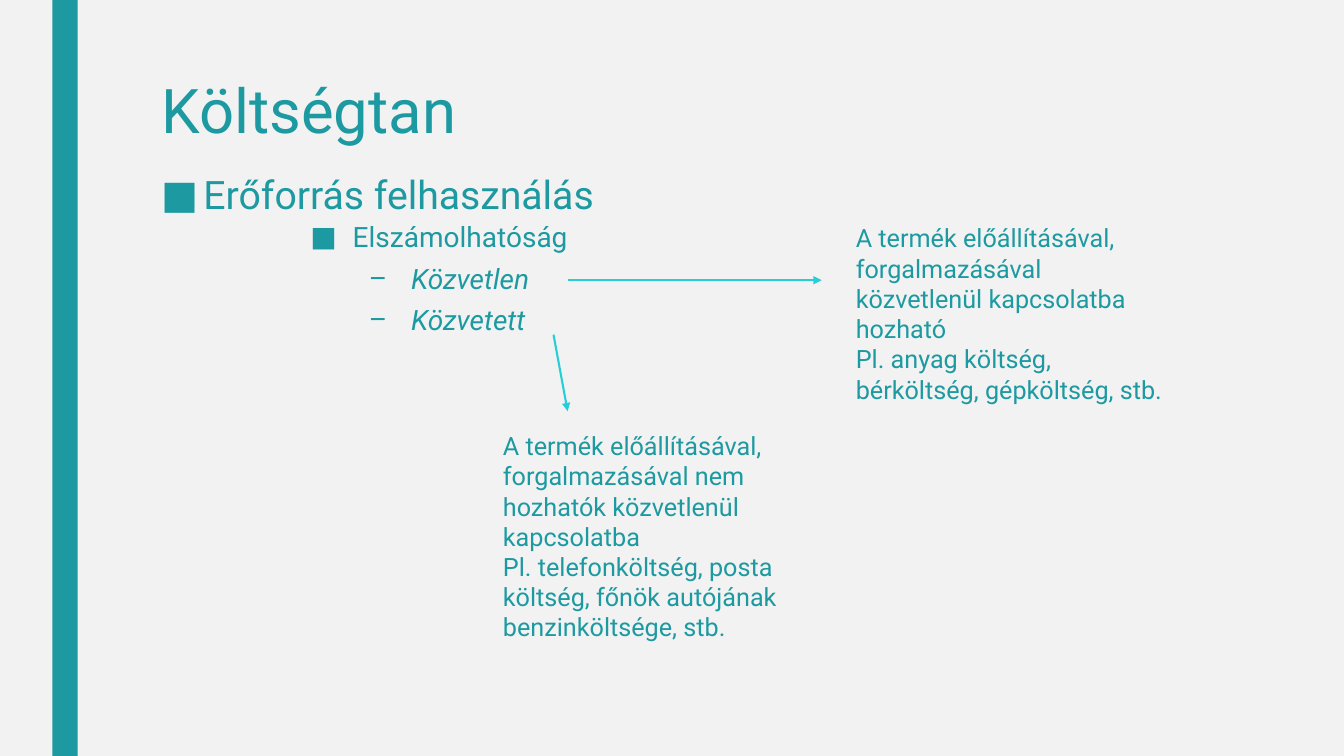
from pptx import Presentation
from pptx.dml.color import RGBColor
from pptx.enum.shapes import MSO_CONNECTOR, MSO_SHAPE
from pptx.enum.text import MSO_ANCHOR, MSO_AUTO_SIZE, PP_ALIGN
from pptx.oxml.ns import qn
from pptx.util import Inches, Pt
from lxml import etree

RECTANGLE = MSO_SHAPE.RECTANGLE
STRAIGHT = MSO_CONNECTOR.STRAIGHT
TOP = MSO_ANCHOR.TOP
LEFT = PP_ALIGN.LEFT
NO_FIT = MSO_AUTO_SIZE.NONE
GROW = MSO_AUTO_SIZE.SHAPE_TO_FIT_TEXT

FONT = "Roboto"
COLORS = {"background": "F2F2F2", "teal": "1D9AA1", "arrow": "27CED7"}
HANGING = 0.42


def color(name):
    return RGBColor.from_string(COLORS[name])


def add_span(para, text, size, italic=False):
    span = para.add_run()
    span.text = text
    span.font.name = FONT
    span.font.size = Pt(size)
    span.font.italic = italic
    span.font.color.rgb = color("teal")


def set_bullet(para, symbol, indent):
    properties = para._p.get_or_add_pPr()
    properties.set("marL", str(Inches(indent)))
    properties.set("indent", str(-Inches(HANGING)))
    etree.SubElement(properties, qn("a:buFont")).set("typeface", FONT)
    etree.SubElement(properties, qn("a:buChar")).set("char", symbol)


def add_text_box(page, box, fit=NO_FIT):
    frame = page.shapes.add_textbox(*map(Inches, box)).text_frame
    frame.word_wrap = True
    frame.auto_size = fit
    return frame


def next_paragraph(frame, index):
    return frame.add_paragraph() if index else frame.paragraphs[0]


def add_side_bar(page, box):
    bar = page.shapes.add_shape(RECTANGLE, *map(Inches, box))
    bar.shadow.inherit = False
    bar.fill.solid()
    bar.fill.fore_color.rgb = color("teal")
    bar.line.fill.background()


def add_title(page, box, text):
    title = page.shapes.title
    title.left, title.top, title.width, title.height = map(Inches, box)
    frame = title.text_frame
    frame.word_wrap = True
    frame.auto_size = NO_FIT
    frame.vertical_anchor = TOP
    para = frame.paragraphs[0]
    para.alignment = LEFT
    para.line_spacing = 0.89
    add_span(para, text, 44)


def add_list(page, box, items, size):
    frame = add_text_box(page, box)
    for index, (level, text) in enumerate(items):
        para = next_paragraph(frame, index)
        para.level = level
        para.line_spacing = 0.94
        para.space_before = Pt(5 if level else 10)
        para.space_after = Pt(2)
        set_bullet(para, "–" if level else "■", 1 if level else HANGING)
        add_span(para, text, size, italic=level > 0)


def add_note(page, box, texts):
    frame = add_text_box(page, box, GROW)
    for index, text in enumerate(texts):
        add_span(next_paragraph(frame, index), text, 18)


def add_arrow(page, start, end):
    arrow = page.shapes.add_connector(STRAIGHT, *map(Inches, start + end))
    arrow.line.color.rgb = color("arrow")
    arrow.line.width = Pt(1.5)
    line = arrow.line._get_or_add_ln()
    etree.SubElement(line, qn("a:tailEnd")).set("type", "triangle")
    etree.SubElement(arrow._element.spPr, qn("a:effectLst"))


def build_cost_slide(deck):
    page = deck.slides.add_slide(deck.slide_layouts[5])
    page.background.fill.solid()
    page.background.fill.fore_color.rgb = color("background")
    add_side_bar(page, (0.52, 0, 0.25, 7.5))
    add_title(page, (1.5, 0.75, 10.5, 1.62), "Költségtan")
    add_list(page, (1.5, 1.68, 10.5, 3.92), [(0, "Erőforrás felhasználás")], 28)
    add_list(
        page,
        (2.98, 2.16, 4.09, 1.47),
        [(0, "Elszámolhatóság"), (1, "Közvetlen"), (1, "Közvetett")],
        20,
    )
    add_arrow(page, (5.63, 2.78), (8.15, 2.78))
    add_note(page, (8.39, 2.16, 3.26, 2.22), [
        "A termék előállításával, forgalmazásával közvetlenül kapcsolatba hozható",
        "Pl. anyag költség, bérköltség, gépköltség, stb.",
    ])
    add_arrow(page, (5.49, 3.32), (5.63, 4.08))
    add_note(page, (4.89, 4.22, 3.26, 2.22), [
        "A termék előállításával, forgalmazásával nem hozhatók közvetlenül kapcsolatba",
        "Pl. telefonköltség, posta költség, főnök autójának benzinköltsége, stb.",
    ])


def main():
    deck = Presentation()
    deck.slide_width = Inches(13.33)
    deck.slide_height = Inches(7.5)
    build_cost_slide(deck)
    deck.save("out.pptx")


if __name__ == "__main__":
    main()
